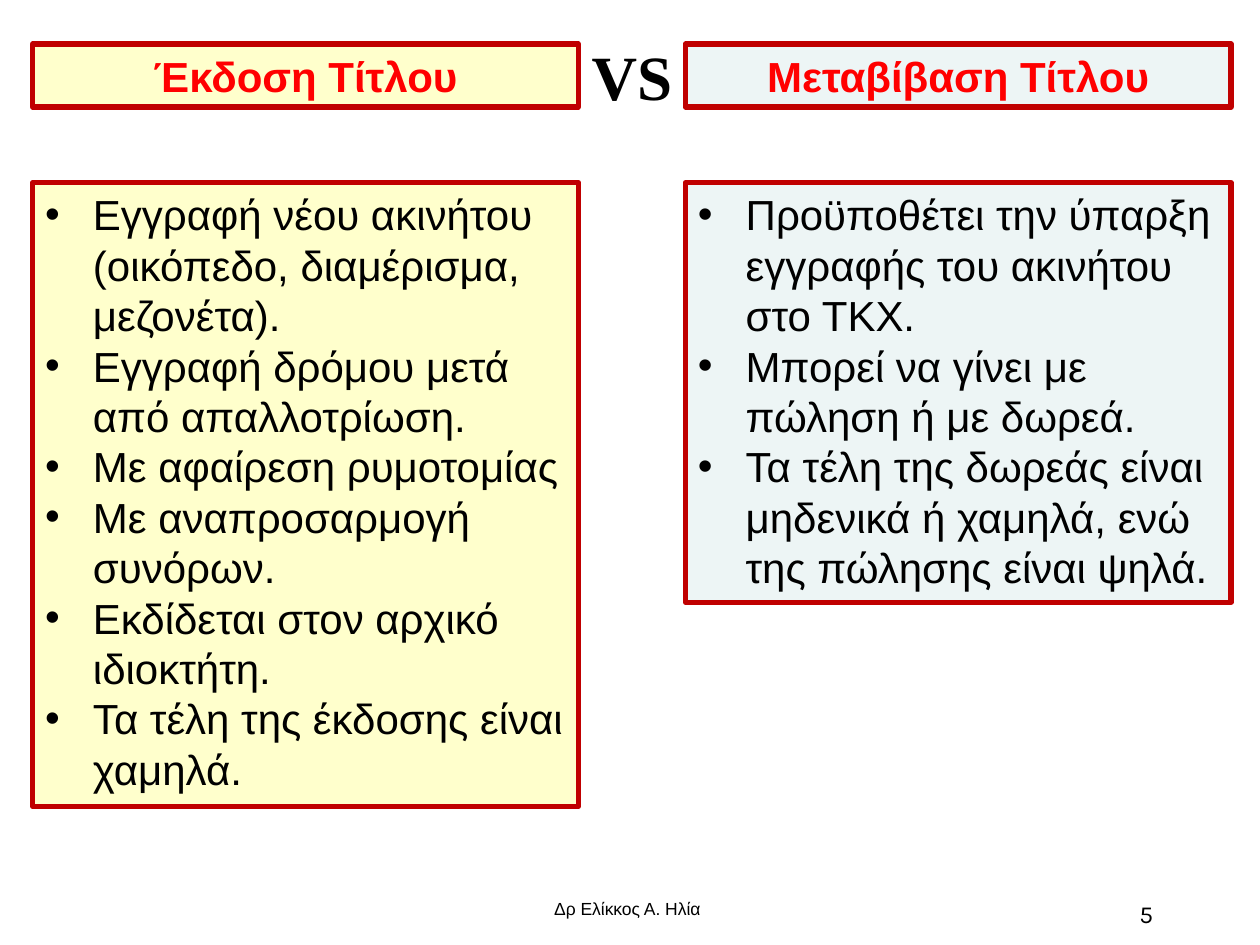
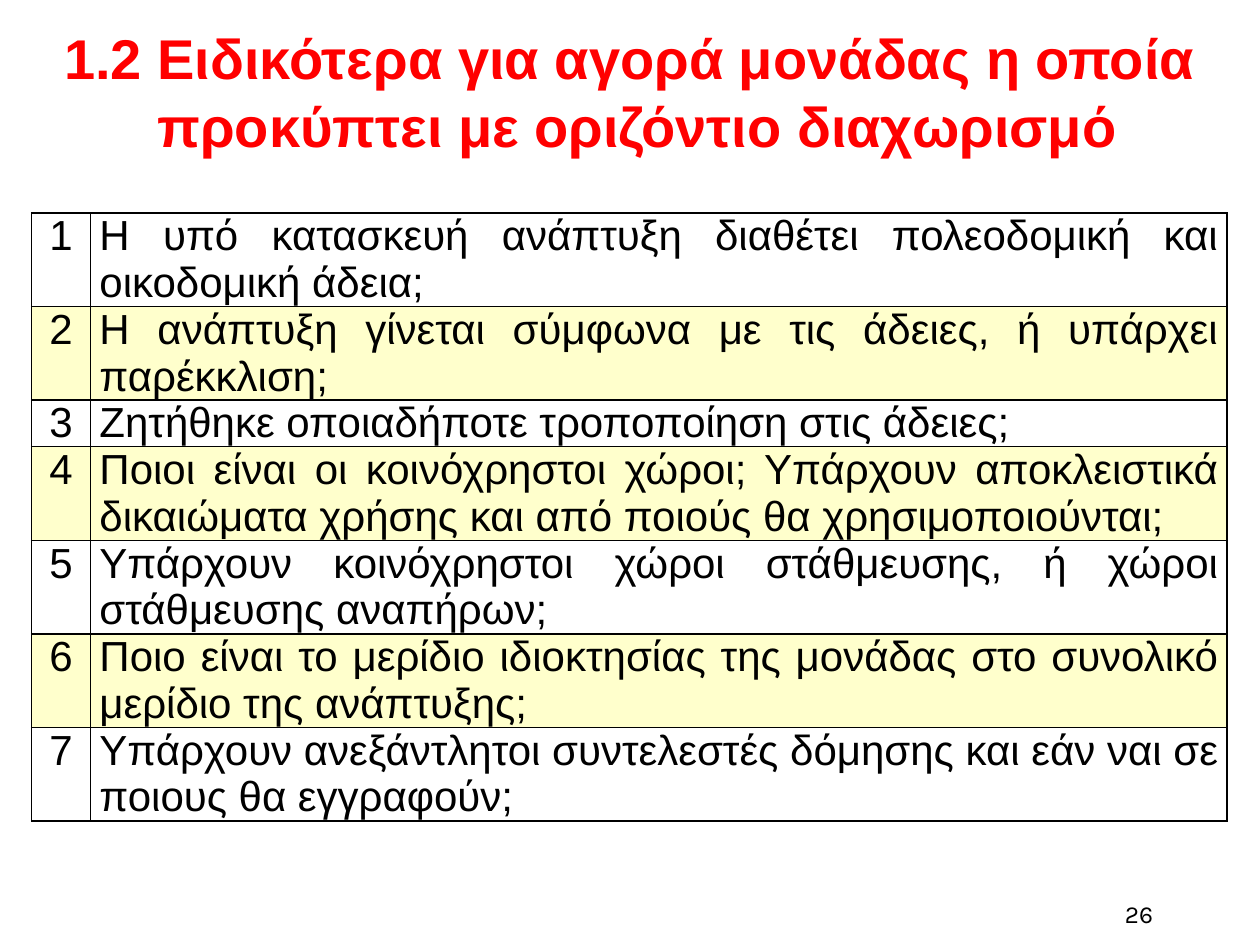
"""Builds two slides on title deeds: a comparison and a checklist table."""
import pptx
import pptx.dml.color
import pptx.enum.shapes
import pptx.enum.text
import pptx.oxml
import pptx.oxml.ns
import pptx.util
from pptx.util import Inches

BLACK, RED, DARK_RED = "000000", "FF0000", "C00000"
WHITE, CREAM, MIST = "FFFFFF", "FFFFCC", "EDF5F5"
ALIGN = pptx.enum.text.PP_ALIGN
TOP = pptx.enum.text.MSO_ANCHOR.TOP
BOTTOM = pptx.enum.text.MSO_ANCHOR.BOTTOM

COLUMN_WIDTH = 4.33
COLUMNS = [
    dict(left=0.26, fill=CREAM, heading="Έκδοση Τίτλου", height=4.95, points=[
        "Εγγραφή νέου ακινήτου (οικόπεδο, διαμέρισμα, μεζονέτα).",
        "Εγγραφή δρόμου μετά από απαλλοτρίωση.",
        "Με αφαίρεση ρυμοτομίας",
        "Με αναπροσαρμογή συνόρων.",
        "Εκδίδεται στον αρχικό ιδιοκτήτη.",
        "Τα τέλη της έκδοσης είναι χαμηλά.",
    ]),
    dict(left=5.44, fill=MIST, heading="Μεταβίβαση Τίτλου", height=3.33, points=[
        "Προϋποθέτει την ύπαρξη εγγραφής του ακινήτου στο ΤΚΧ.",
        "Μπορεί να γίνει με πώληση ή με δωρεά.",
        "Τα τέλη της δωρεάς είναι μηδενικά ή χαμηλά, ενώ της πώλησης είναι ψηλά.",
    ]),
]
AUTHOR = "Δρ Ελίκκος Α. Ηλία"

TITLE = ["1.2 Ειδικότερα για αγορά μονάδας η οποία",
         " προκύπτει με οριζόντιο διαχωρισμό"]
LINE_HEIGHT = 0.37
QUESTIONS = [
    ("Η υπό κατασκευή ανάπτυξη διαθέτει πολεοδομική και οικοδομική άδεια;", 2),
    ("Η ανάπτυξη γίνεται σύμφωνα με τις άδειες, ή υπάρχει παρέκκλιση;", 2),
    ("Ζητήθηκε οποιαδήποτε τροποποίηση στις άδειες;", 1),
    ("Ποιοι είναι οι κοινόχρηστοι χώροι; Υπάρχουν αποκλειστικά δικαιώματα "
     "χρήσης και από ποιούς θα χρησιμοποιούνται;", 2),
    ("Υπάρχουν κοινόχρηστοι χώροι στάθμευσης, ή χώροι στάθμευσης αναπήρων;", 2),
    ("Ποιο είναι το μερίδιο ιδιοκτησίας της μονάδας στο συνολικό μερίδιο "
     "της ανάπτυξης;", 2),
    ("Υπάρχουν ανεξάντλητοι συντελεστές δόμησης και εάν ναι σε ποιους θα "
     "εγγραφούν;", 2),
]


def rgb(value):
    return pptx.dml.color.RGBColor.from_string(value)


def add_bullet(p):
    pPr = p._p.get_or_add_pPr()
    pPr.set("marL", str(Inches(0.38)))
    pPr.set("indent", str(-Inches(0.38)))
    ns = pptx.oxml.ns.nsdecls("a")
    pPr.append(pptx.oxml.parse_xml(f'<a:buFont {ns} typeface="Arial"/>'))
    pPr.append(pptx.oxml.parse_xml(f'<a:buChar {ns} char="•"/>'))


def write(tf, paragraphs, size=24, font="Arial", color=BLACK, bold=False,
          align=ALIGN.LEFT, anchor=TOP, leading=None, bullets=False, wrap=True):
    tf.word_wrap = wrap
    tf.vertical_anchor = anchor
    for i, text in enumerate(paragraphs):
        p = tf.add_paragraph() if i else tf.paragraphs[0]
        p.alignment = align
        if leading:
            p.line_spacing = pptx.util.Pt(leading)
        if bullets:
            add_bullet(p)
        r = p.add_run()
        r.text = text
        r.font.size = pptx.util.Pt(size)
        r.font.name = font
        r.font.bold = bold
        r.font.color.rgb = rgb(color)


def add_text(s, box, paragraphs, **style):
    sp = s.shapes.add_textbox(*map(Inches, box))
    write(sp.text_frame, paragraphs, **style)


def add_panel(s, box, fill, paragraphs, **style):
    sp = s.shapes.add_shape(pptx.enum.shapes.MSO_SHAPE.RECTANGLE, *map(Inches, box))
    sp.shadow.inherit = False
    sp.fill.solid()
    sp.fill.fore_color.rgb = rgb(fill)
    sp.line.color.rgb = rgb(DARK_RED)
    sp.line.width = pptx.util.Pt(3)
    write(sp.text_frame, paragraphs, leading=28.8, **style)


def add_slide(prs, number):
    s = prs.slides.add_slide(prs.slide_layouts[6])
    add_text(s, (7.17, 6.92, 2.08, 0.5), [str(number)], size=14, font="Karla",
             align=ALIGN.RIGHT, anchor=BOTTOM)
    return s


def fill_cell(cell, text, fill, align):
    cell.margin_left = cell.margin_right = Inches(0.07)
    cell.margin_top = cell.margin_bottom = 0
    tcPr = cell._tc.get_or_add_tcPr()
    for side in "LRTB":
        tcPr.append(pptx.oxml.parse_xml(
            f'<a:ln{side} {pptx.oxml.ns.nsdecls("a")} w="12700"><a:solidFill>'
            f'<a:srgbClr val="{BLACK}"/></a:solidFill></a:ln{side}>'))
    cell.fill.solid()
    cell.fill.fore_color.rgb = rgb(fill)
    write(cell.text_frame, [text], align=align, leading=26.7)


def build_comparison(prs):
    s = add_slide(prs, 5)
    for column in COLUMNS:
        left, fill = column["left"], column["fill"]
        add_panel(s, (left, 0.35, COLUMN_WIDTH, 0.5), fill, [column["heading"]],
                  color=RED, bold=True, align=ALIGN.CENTER)
        add_panel(s, (left, 1.45, COLUMN_WIDTH, column["height"]), fill,
                  column["points"], bullets=True)
    add_text(s, (4.59, 0.25, 0.85, 0.71), ["VS"], size=36, font="Times New Roman",
             bold=True, align=ALIGN.CENTER, wrap=False)
    add_text(s, (4.3, 7.08, 1.43, 0.27), [AUTHOR], size=10)


def build_checklist(prs):
    s = add_slide(prs, 26)
    height = LINE_HEIGHT * sum(lines for _, lines in QUESTIONS)
    table = s.shapes.add_table(len(QUESTIONS), 2, Inches(0.25), Inches(1.69),
                               Inches(9.49), Inches(height)).table
    table.first_row = table.horz_banding = False
    for column, width in zip(table.columns, (0.47, 9.02)):
        column.width = Inches(width)
    for i, (question, lines) in enumerate(QUESTIONS):
        table.rows[i].height = Inches(LINE_HEIGHT * lines)
        fill = CREAM if i % 2 else WHITE
        fill_cell(table.cell(i, 0), str(i + 1), fill, ALIGN.CENTER)
        fill_cell(table.cell(i, 1), question, fill, ALIGN.JUSTIFY)
    add_text(s, (0, 0.14, 10, 1.18), TITLE, size=32, color=RED, bold=True,
             align=ALIGN.CENTER, leading=38.4)


def main():
    prs = pptx.Presentation()
    prs.slide_width, prs.slide_height = Inches(10), Inches(7.5)
    build_comparison(prs)
    build_checklist(prs)
    prs.save("out.pptx")


if __name__ == "__main__":
    main()
